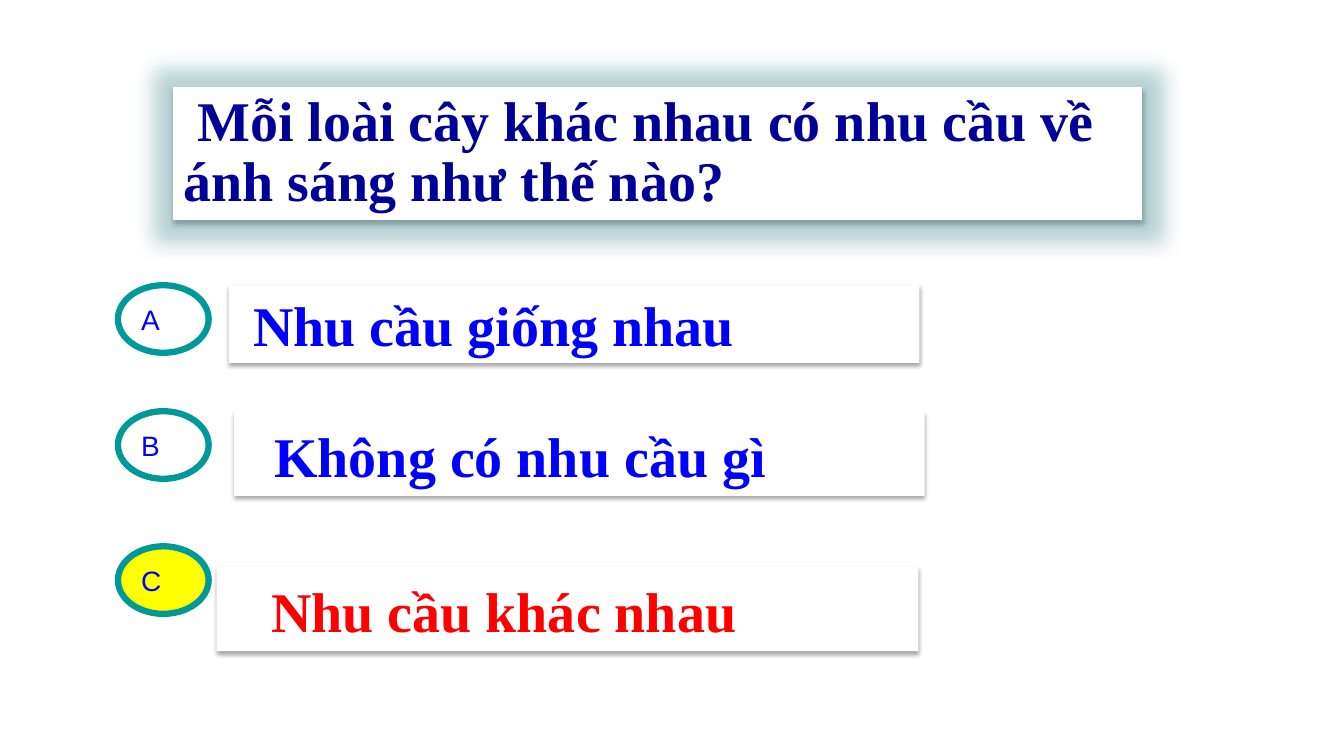
from lxml import etree
from pptx import Presentation, util as u
from pptx.dml.color import RGBColor
from pptx.enum import shapes, text
from pptx.oxml.ns import nsdecls

GLOW = '<a:glow rad="365760"><a:srgbClr val="3399A0"><a:alpha val="27000"/></a:srgbClr></a:glow>'
SHADOW = ('<a:outerShdw blurRad="40000" dist="23000" dir="5400000" rotWithShape="0">'
          '<a:srgbClr val="000000"><a:alpha val="35000"/></a:srgbClr></a:outerShdw>')


def paint(shape, fill, line=None, width=0.75, effects=""):
    shape.fill.solid()
    shape.fill.fore_color.rgb = RGBColor.from_string(fill)
    if line:
        shape.line.color.rgb = RGBColor.from_string(line)
        shape.line.width = u.Pt(width)
    else:
        shape.line.fill.background()
    # Effects must follow the line in the shape properties
    shape._element.spPr.append(
        etree.fromstring(f'<a:effectLst {nsdecls("a")}>{effects}</a:effectLst>'))


def write(shape, words, color, size=40, font="Times New Roman", bold=True,
          anchor=text.MSO_ANCHOR.TOP, left=0.1, top=0.05):
    frame = shape.text_frame
    frame.word_wrap = True
    frame.auto_size = text.MSO_AUTO_SIZE.NONE
    frame.vertical_anchor = anchor
    frame.margin_left, frame.margin_top = u.Inches(left), u.Inches(top)
    paragraph = frame.paragraphs[0]
    paragraph.alignment = text.PP_ALIGN.LEFT
    run = paragraph.add_run()
    run.text = words
    run.font.name, run.font.size, run.font.bold = font, u.Pt(size), bold
    run.font.color.rgb = RGBColor.from_string(color)
    return paragraph


prs = Presentation()
prs.slide_width, prs.slide_height = u.Inches(13.33), u.Inches(7.5)
slide = prs.slides.add_slide(prs.slide_layouts[5])

question = slide.shapes.title
question.left, question.top = u.Inches(1.72), u.Inches(0.87)
question.width, question.height = u.Inches(9.6), u.Inches(1.31)
paint(question, "FFFFFF", "FFFFFF", effects=GLOW + SHADOW)
wording = write(question, "Mỗi loài cây khác nhau có nhu cầu về ánh sáng như thế nào?", "000099")
wording.line_spacing = 0.9
wording.space_before = u.Pt(4.5)
wording._p.get_or_add_pPr().set("indent", str(u.Inches(0.14)))

# letter, badge top, badge fill, answer, colour, box (left, top, width, height), insets (left, top)
answers = [
    ("A", 2.83, "FFFFFF", "Nhu cầu giống nhau", "0000FF", (2.27, 2.83, 6.85, 0.77), (0.24, 0.05)),
    ("B", 4.08, "FFFFFF", "Không có nhu cầu gì", "0000FF", (2.32, 4.08, 6.85, 0.84), (0.4, 0.1)),
    ("C", 5.42, "FFFF00", "Nhu cầu khác nhau", "FF0000", (2.15, 5.62, 6.96, 0.84), (0.54, 0.1)),
]
for letter, badge_top, badge_fill, answer, color, box, (left, top) in answers:
    bar = slide.shapes.add_shape(shapes.MSO_SHAPE.RECTANGLE, *map(u.Inches, box))
    paint(bar, "FFFFFF", effects=SHADOW)
    write(bar, answer, color, left=left, top=top)

    badge = slide.shapes.add_shape(
        shapes.MSO_SHAPE.OVAL, *map(u.Inches, (1.17, badge_top, 0.9, 0.67)))
    paint(badge, badge_fill, "009999", 4.5)
    write(badge, letter, "0000FF", size=20, font="Arial", bold=False,
          anchor=text.MSO_ANCHOR.MIDDLE)

prs.save("out.pptx")
